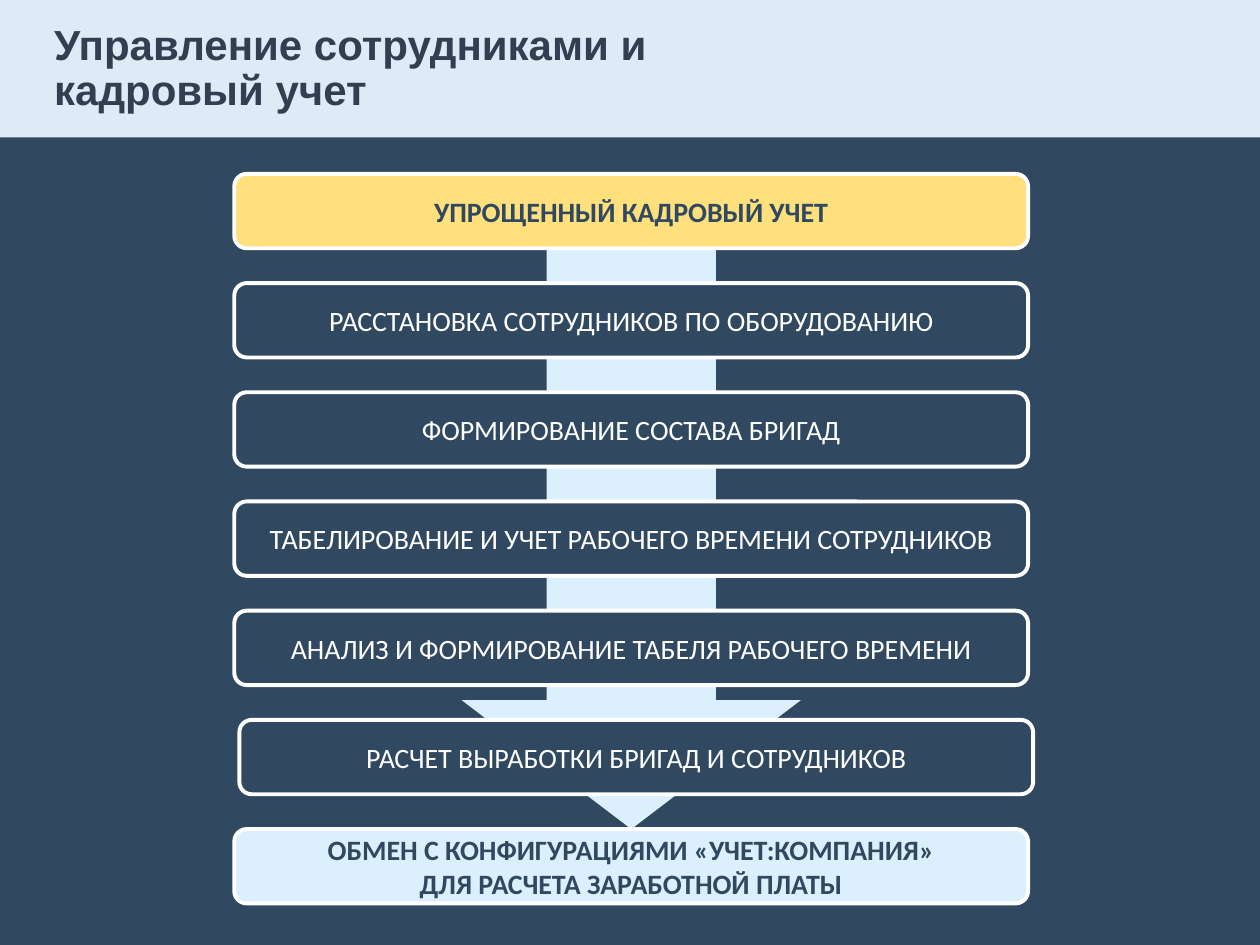
"""Builds the slide on staff management and personnel records."""
import pptx
import pptx.util
import pptx.dml.color
import pptx.enum.shapes
import pptx.enum.text

Inches, Pt = pptx.util.Inches, pptx.util.Pt
RGBColor = pptx.dml.color.RGBColor
MSO_SHAPE = pptx.enum.shapes.MSO_SHAPE
PP_ALIGN = pptx.enum.text.PP_ALIGN
MSO_ANCHOR = pptx.enum.text.MSO_ANCHOR

NAVY = RGBColor(0x30, 0x49, 0x61)
SLATE = RGBColor(0x33, 0x3F, 0x50)
BAND_BLUE = RGBColor(0xDE, 0xEB, 0xF7)
PALE_BLUE = RGBColor(0xDB, 0xF0, 0xFC)
YELLOW = RGBColor(0xFF, 0xE0, 0x7D)
WHITE = RGBColor(0xFF, 0xFF, 0xFF)

HEADING = "Управление сотрудниками и кадровый учет"
STYLES = {
    "start": (YELLOW, NAVY, True),
    "step": (NAVY, WHITE, False),
    "finish": (PALE_BLUE, NAVY, True),
}
STAGES = [
    ("УПРОЩЕННЫЙ КАДРОВЫЙ УЧЕТ", "start", 0),
    ("РАССТАНОВКА СОТРУДНИКОВ ПО ОБОРУДОВАНИЮ", "step", 0),
    ("ФОРМИРОВАНИЕ СОСТАВА БРИГАД", "step", 0),
    ("ТАБЕЛИРОВАНИЕ И УЧЕТ РАБОЧЕГО ВРЕМЕНИ СОТРУДНИКОВ", "step", 0),
    ("АНАЛИЗ И ФОРМИРОВАНИЕ ТАБЕЛЯ РАБОЧЕГО ВРЕМЕНИ", "step", 0),
    ("РАСЧЕТ ВЫРАБОТКИ БРИГАД И СОТРУДНИКОВ", "step", 0.04),
    ("ОБМЕН С КОНФИГУРАЦИЯМИ «УЧЕТ:КОМПАНИЯ»\vДЛЯ РАСЧЕТА ЗАРАБОТНОЙ ПЛАТЫ", "finish", 0),
]
STAGE_LEFT, STAGE_WIDTH, STAGE_HEIGHT = 1.86, 6.3, 0.59
FIRST_TOP, LAST_TOP = 1.38, 6.58
ARROW_WIDTH = 2.69


def add_block(slide, kind, left, top, width, height, fill):
    block = slide.shapes.add_shape(
        kind, Inches(left), Inches(top), Inches(width), Inches(height))
    block.shadow.inherit = False
    block.fill.solid()
    block.fill.fore_color.rgb = fill
    block.line.fill.background()
    return block


def write(frame, text, font_name, size, color, bold, align):
    frame.text = text
    frame.word_wrap = True
    frame.vertical_anchor = MSO_ANCHOR.MIDDLE
    paragraph = frame.paragraphs[0]
    paragraph.alignment = align
    for run in paragraph.runs:
        run.font.name = font_name
        run.font.size = Pt(size)
        run.font.bold = bold
        run.font.color.rgb = color


def add_heading(slide):
    band = add_block(slide, MSO_SHAPE.RECTANGLE, 0, 0, 10, 1.09, BAND_BLUE)
    heading = slide.shapes.title
    heading._element.addprevious(band._element)
    heading.left, heading.top = Inches(0.33), Inches(0.16)
    heading.width, heading.height = Inches(6.06), Inches(0.78)
    write(heading.text_frame, HEADING, "Arial", 24, SLATE, True, PP_ALIGN.LEFT)
    heading.text_frame.auto_size = pptx.enum.text.MSO_AUTO_SIZE.NONE
    heading.text_frame.paragraphs[0].line_spacing = 0.9


def add_flow(slide):
    arrow_left = STAGE_LEFT + (STAGE_WIDTH - ARROW_WIDTH) / 2
    arrow_top = FIRST_TOP + STAGE_HEIGHT
    arrow = add_block(slide, MSO_SHAPE.DOWN_ARROW, arrow_left, arrow_top,
                      ARROW_WIDTH, LAST_TOP - arrow_top, PALE_BLUE)
    arrow.adjustments[0], arrow.adjustments[1] = 0.5, 0.38
    pitch = (LAST_TOP - FIRST_TOP) / (len(STAGES) - 1)
    for row, (label, style, shift) in enumerate(STAGES):
        fill, color, bold = STYLES[style]
        stage = add_block(slide, MSO_SHAPE.ROUNDED_RECTANGLE, STAGE_LEFT + shift,
                          FIRST_TOP + row * pitch, STAGE_WIDTH, STAGE_HEIGHT, fill)
        stage.line.color.rgb = WHITE
        stage.line.width = Pt(2.25)
        write(stage.text_frame, label, "Calibri", 16, color, bold, PP_ALIGN.CENTER)


def main():
    deck = pptx.Presentation()
    deck.slide_width, deck.slide_height = Inches(10), Inches(7.5)
    slide = deck.slides.add_slide(deck.slide_layouts[5])
    slide.background.fill.solid()
    slide.background.fill.fore_color.rgb = NAVY
    add_heading(slide)
    add_flow(slide)
    deck.save("out.pptx")


if __name__ == "__main__":
    main()
